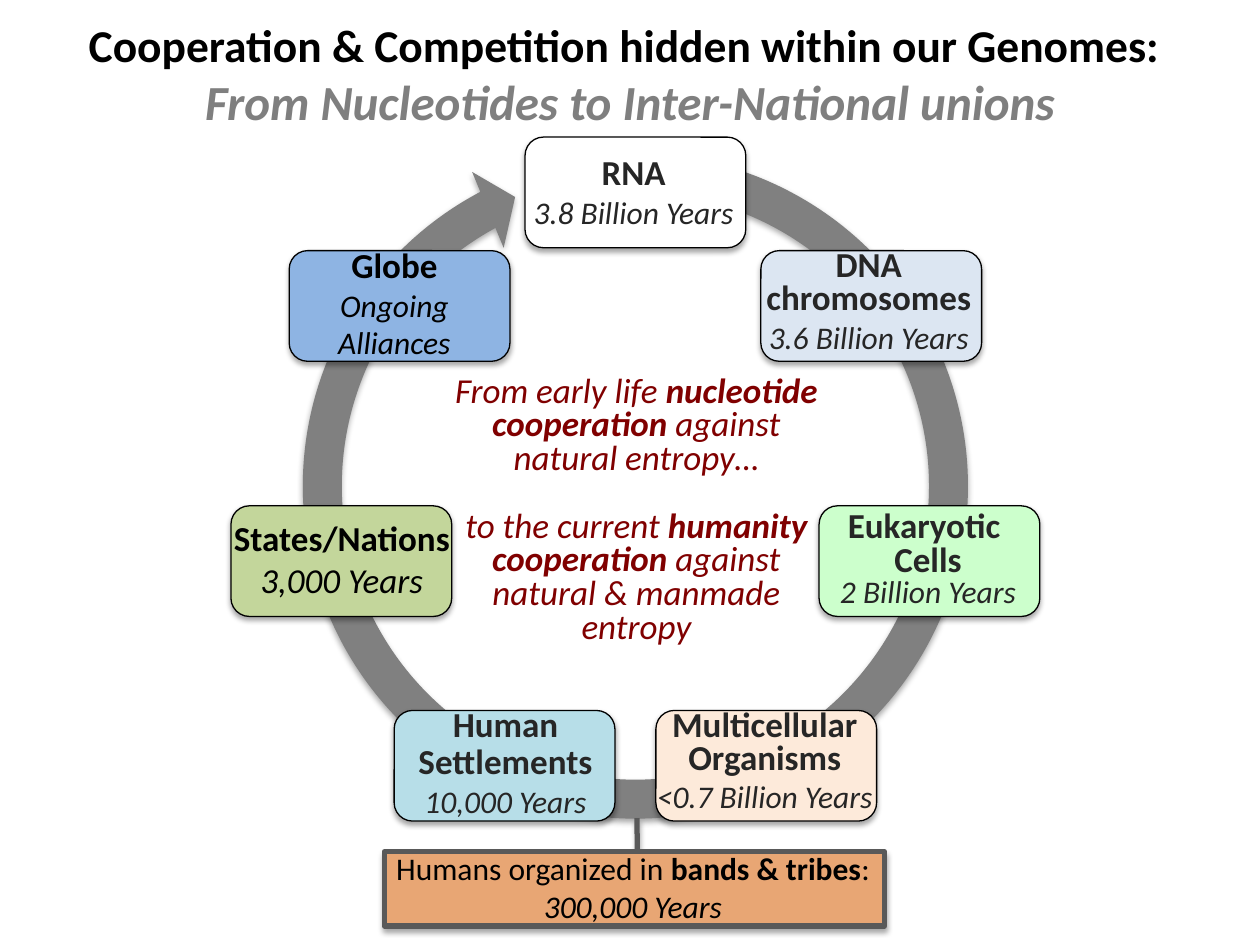
import math
from dataclasses import dataclass

import pptx
import pptx.dml.color
import pptx.enum.shapes
import pptx.enum.text
import pptx.oxml.ns
import pptx.util
from lxml import etree

Cm = pptx.util.Cm
Pt = pptx.util.Pt
SHAPE = pptx.enum.shapes.MSO_SHAPE
ALIGN = pptx.enum.text.PP_ALIGN
qn = pptx.oxml.ns.qn


@dataclass(frozen=True)
class Theme:
    font: str = "Calibri"
    black: str = "000000"
    ink: str = "262626"
    subtitle: str = "7F7F7F"
    ring: str = "808080"
    message: str = "800000"
    callout: str = "E8A674"
    callout_line: str = "595959"
    title_size: int = 26
    subtitle_size: int = 28
    name_size: int = 20
    date_size: int = 18


@dataclass(frozen=True)
class Box:
    left: float
    top: float
    width: float
    height: float

    def inner(self, left, top, width, height):
        return Box(self.left + left, self.top + top, width, height)

    def lengths(self):
        return [Cm(n) for n in (self.left, self.top, self.width, self.height)]


@dataclass(frozen=True)
class Line:
    """One paragraph: spans are (text, bold, italic)."""
    spans: tuple
    size: int
    color: str
    spacing: float = 1.0
    before: float = 0


THEME = Theme()
CARD_WIDTH, CARD_HEIGHT = 4.45, 2.23


def rgb(color):
    return pptx.dml.color.RGBColor.from_string(color)


def add_figure(page, kind, box, fill, line=None, width=0.75, adjustments=()):
    """Filled preset shape with a soft shadow below it."""
    shape = page.shapes.add_shape(kind, *box.lengths())
    for index, value in enumerate(adjustments):
        shape.adjustments[index] = value
    shape.fill.solid()
    shape.fill.fore_color.rgb = rgb(fill)
    if line:
        shape.line.color.rgb = rgb(line)
        shape.line.width = Pt(width)
    else:
        shape.line.fill.background()
    shape.shadow.inherit = False
    effects = shape._element.spPr.find(qn("a:effectLst"))
    shadow = etree.SubElement(effects, qn("a:outerShdw"), blurRad="40000",
                              dist="23000", dir="5400000", rotWithShape="0")
    color = etree.SubElement(shadow, qn("a:srgbClr"), val=THEME.black)
    etree.SubElement(color, qn("a:alpha"), val="35000")


def add_text(page, box, lines, wrap=True):
    """Centred text box made of Line paragraphs."""
    frame = page.shapes.add_textbox(*box.lengths()).text_frame
    frame.word_wrap = wrap
    frame.auto_size = pptx.enum.text.MSO_AUTO_SIZE.SHAPE_TO_FIT_TEXT
    for index, line in enumerate(lines):
        para = frame.add_paragraph() if index else frame.paragraphs[0]
        para.alignment = ALIGN.CENTER
        para.line_spacing = line.spacing
        if line.before:
            para.space_before = Pt(line.before)
        para.font.name = THEME.font
        para.font.size = Pt(line.size)
        para.font.color.rgb = rgb(line.color)
        for text, bold, italic in line.spans:
            span = para.add_run()
            span.text = text
            span.font.bold = bold
            span.font.italic = italic


def add_title(page, box):
    title = page.shapes.title
    title.left, title.top, title.width, title.height = box.lengths()
    frame = title.text_frame
    frame.vertical_anchor = pptx.enum.text.MSO_ANCHOR.MIDDLE
    para = frame.paragraphs[0]
    para.alignment = ALIGN.CENTER
    para.font.name = THEME.font
    para.font.bold = True
    heading = para.add_run()
    heading.text = "Cooperation & Competition hidden within our Genomes: "
    para.add_line_break()
    subtitle = para.add_run()
    subtitle.text = "From Nucleotides to Inter-National unions"
    subtitle.font.italic = True
    for span, size, color in ((heading, THEME.title_size, THEME.black),
                              (subtitle, THEME.subtitle_size, THEME.subtitle)):
        span.font.bold = True
        span.font.size = Pt(size)
        span.font.color.rgb = rgb(color)


def add_stage(page, box, fill, names, date, caption, color=THEME.ink,
              spacing=0.8, date_spacing=1.0, date_size=THEME.date_size, wrap=True):
    """Card with a bold name and an italic date."""
    add_figure(page, SHAPE.ROUNDED_RECTANGLE, box, fill, THEME.black)
    lines = [Line(((name, True, False),), THEME.name_size, color, spacing)
             for name in names]
    lines.append(Line(((date, False, True),), date_size, color, date_spacing))
    add_text(page, box.inner(*caption), lines, wrap)


def add_cycle(page, box):
    """Circular arrow with the stages at the corners of a heptagon."""
    add_figure(page, SHAPE.CIRCULAR_ARROW, box, THEME.ring,
               adjustments=(0.055, 3.307, 145.137, 169.514, 0.058))
    stages = (
        dict(fill="FFFFFF", names=["RNA"], date="3.8 Billion Years",
             caption=(-0.2, 0.15, 4.78, 1.88), spacing=1.0, wrap=False),
        dict(fill="DCE6F2", names=["DNA chromosomes"], date="3.6 Billion Years",
             caption=(-0.38, -0.13, 5.11, 2.39)),
        dict(fill="CCFFCC", names=["Eukaryotic ", "Cells"], date="2 Billion Years",
             caption=(-0.36, 0, 5.11, 2.26), date_spacing=0.8),
        dict(fill="FDEADA", names=["Multicellular Organisms"],
             date="<0.7 Billion Years", caption=(-0.36, -0.13, 5.11, 2.39)),
        dict(fill="B7DEE8", names=["Human Settlements"], date="10,000 Years",
             caption=(-0.51, -0.2, 5.51, 2.57), spacing=0.9),
        dict(fill="C3D69B", names=["States/Nations"], date="3,000 Years",
             caption=(-0.23, 0.08, 4.93, 1.96), color=THEME.black, spacing=1.0,
             date_size=THEME.name_size, wrap=False),
        dict(fill="8EB4E3", names=["Globe"], date="Ongoing Alliances",
             caption=(-0.33, -0.1, 4.9, 2.49), color=THEME.black),
    )
    center_x, center_y = box.left + box.width / 2, box.top + 7.3
    radius = 6.08
    for index, stage in enumerate(stages):
        angle = 2 * math.pi * index / len(stages)
        card = Box(center_x + radius * math.sin(angle) - CARD_WIDTH / 2,
                   center_y - radius * math.cos(angle) - CARD_HEIGHT / 2,
                   CARD_WIDTH, CARD_HEIGHT)
        add_stage(page, card, **stage)
    # Message inside the ring
    messages = (
        ("From early life ", "nucleotide cooperation ", "against natural entropy…"),
        ("to the current ", "humanity cooperation ",
         "against natural & manmade entropy"),
    )
    add_text(page, box.inner(3.12, 4.8, 8.08, 5.77), [
        Line(((opening, False, True), (stress, True, True), (ending, False, True)),
             THEME.name_size, THEME.message, 0.8, 19.5 * index)
        for index, (opening, stress, ending) in enumerate(messages)])


def add_tribes_callout(page, box):
    add_figure(page, SHAPE.LINE_CALLOUT_1, box, THEME.callout, THEME.callout_line,
               3, adjustments=(-0.452, 0.505, -0.001, 0.506))
    add_text(page, box.inner(-0.03, -0.18, box.width, 1.8), [
        Line((("Humans organized in ", False, False), ("bands & tribes", True, False),
              (": ", False, False), ("300,000 Years", False, True)),
             THEME.date_size, THEME.black)])


def main():
    deck = pptx.Presentation()
    deck.slide_width, deck.slide_height = Cm(25.4), Cm(19.05)
    page = deck.slides.add_slide(deck.slide_layouts[5])
    add_cycle(page, Box(5.67, 2.66, 14.28, 14.28))
    add_tribes_callout(page, Box(7.75, 17.17, 10.08, 1.5))
    add_title(page, Box(0, 0.03, 25.4, 2.92))
    deck.save("out.pptx")


if __name__ == "__main__":
    main()
